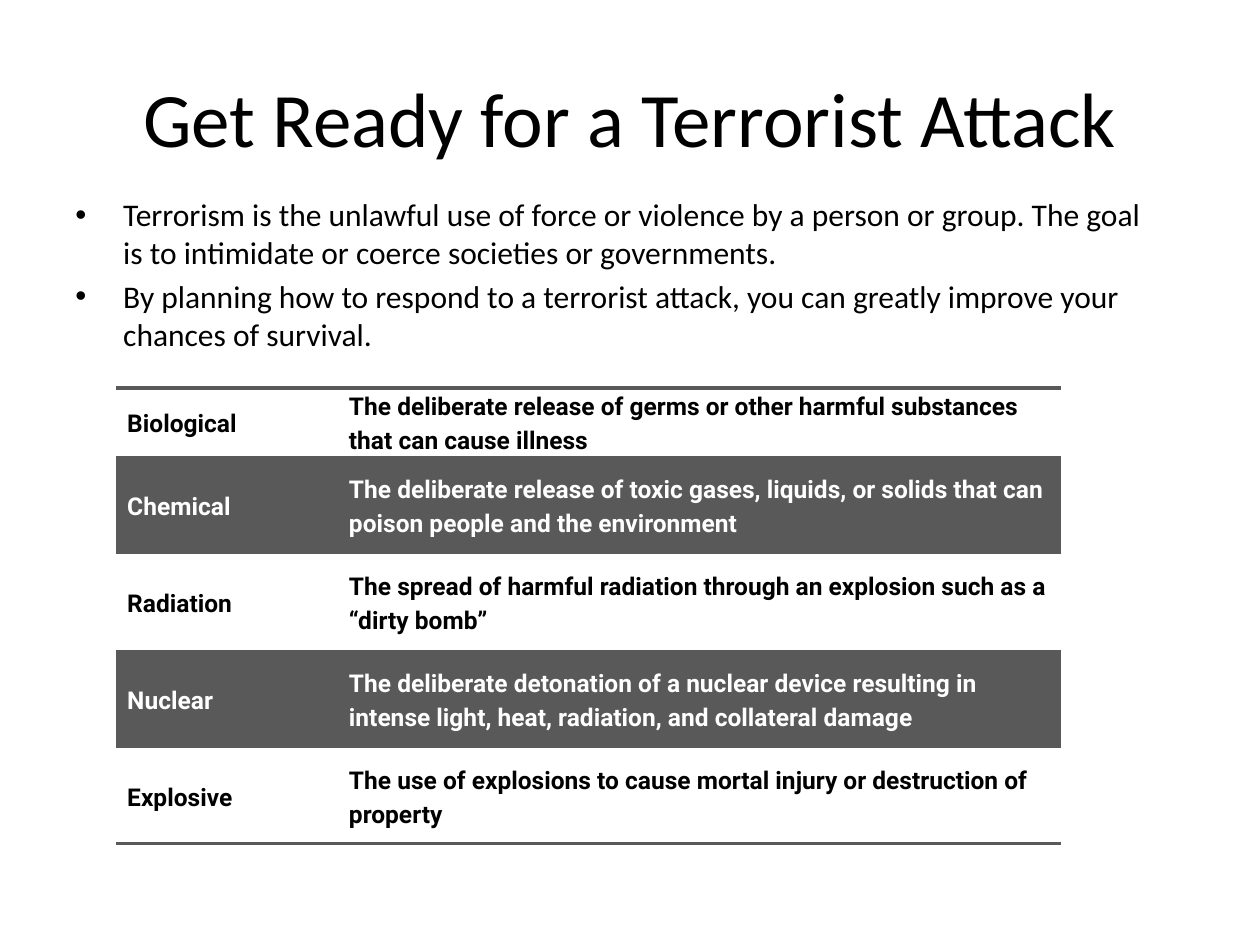
"""Build a slide on terrorist attacks: a title, two bullets and a table of threats."""
from dataclasses import dataclass

from lxml import etree
from pptx import Presentation
from pptx import util as u
from pptx.dml.color import RGBColor
from pptx.enum import text
from pptx.oxml.ns import qn

COLORS = {"ink": "000000", "paper": "FFFFFF", "band": "595959"}
NO_GRID_STYLE = "{2D5ABB26-0587-4C30-8999-92F81FD0307C}"
COLUMN_WIDTHS = (1.76, 5.74)


@dataclass(frozen=True)
class Threat:
    name: str
    meaning: str
    height: float
    banded: bool = False


BULLETS = (
    "Terrorism is the unlawful use of force or violence by a person or group. "
    "The goal is to intimidate or coerce societies or governments.",
    "By planning how to respond to a terrorist attack, you can greatly improve "
    "your chances of survival.",
)
THREATS = (
    Threat("Biological", "The deliberate release of germs or other harmful "
           "substances that can cause illness", 0.52),
    Threat("Chemical", "The deliberate release of toxic gases, liquids, or solids "
           "that can poison people and the environment", 0.78, True),
    Threat("Radiation", "The spread of harmful radiation through an explosion "
           "such as a “dirty bomb”", 0.76),
    Threat("Nuclear", "The deliberate detonation of a nuclear device resulting in "
           "intense light, heat, radiation, and collateral damage", 0.78, True),
    Threat("Explosive", "The use of explosions to cause mortal injury or "
           "destruction of property", 0.76),
)


def write(para, words: str, *, size: float, font: str = "Calibri", color: str = "ink",
          bold: bool = False, align=text.PP_ALIGN.LEFT, spacing: float = 1.0,
          before: float = 0) -> None:
    para.alignment = align
    para.line_spacing = spacing
    para.space_before = u.Pt(before)
    span = para.add_run()
    span.text = words
    span.font.name = font
    span.font.size = u.Pt(size)
    span.font.bold = bold
    span.font.color.rgb = RGBColor.from_string(COLORS[color])


def add_box(page, left: float, top: float, width: float, height: float, anchor):
    box = page.shapes.add_textbox(*map(u.Inches, (left, top, width, height)))
    box.text_frame.word_wrap = True
    box.text_frame.vertical_anchor = anchor
    return box.text_frame


def add_bullet(para, indent: float) -> None:
    properties = para._p.get_or_add_pPr()
    properties.set("marL", str(u.Inches(indent)))
    properties.set("indent", str(-u.Inches(indent)))
    etree.SubElement(properties, qn("a:buFont"), typeface="Arial")
    etree.SubElement(properties, qn("a:buChar"), char="•")


def add_border(cell, side: str, color: str, points: float) -> None:
    line = etree.Element(qn(f"a:{side}"), w=str(u.Pt(points)))
    fill = etree.SubElement(line, qn("a:solidFill"))
    etree.SubElement(fill, qn("a:srgbClr"), val=COLORS[color])
    cell._tc.get_or_add_tcPr().insert(0, line)


def fill_cell(cell, words: str, banded: bool) -> None:
    cell.vertical_anchor = text.MSO_ANCHOR.MIDDLE
    cell.margin_left = cell.margin_right = u.Inches(0.09)
    cell.margin_top = cell.margin_bottom = 0
    if banded:
        cell.fill.solid()
        cell.fill.fore_color.rgb = RGBColor.from_string(COLORS["band"])
    else:
        cell.fill.background()
    write(cell.text_frame.paragraphs[0], words, size=14, font="Roboto", bold=True,
          color="paper" if banded else "ink", spacing=1.15)


def add_threat_table(page, left: float, top: float) -> None:
    width, height = sum(COLUMN_WIDTHS), sum(threat.height for threat in THREATS)
    frame = page.shapes.add_table(len(THREATS), len(COLUMN_WIDTHS),
                                  *map(u.Inches, (left, top, width, height)))
    table = frame.table
    table.first_row = table.horz_banding = False
    table._tbl.tblPr.find(qn("a:tableStyleId")).text = NO_GRID_STYLE
    for column, column_width in zip(table.columns, COLUMN_WIDTHS):
        column.width = u.Inches(column_width)
    for row, threat in zip(table.rows, THREATS):
        row.height = u.Inches(threat.height)
        for cell, words in zip(row.cells, (threat.name, threat.meaning)):
            fill_cell(cell, words, threat.banded)
    for index, side in ((0, "lnT"), (len(THREATS) - 1, "lnB")):
        for cell in table.rows[index].cells:
            add_border(cell, side, "band", 2.25)


def main() -> None:
    deck = Presentation()
    deck.slide_width, deck.slide_height = u.Inches(10), u.Inches(7.5)
    page = deck.slides.add_slide(deck.slide_layouts[6])

    title = add_box(page, 0.5, 0.3, 9, 1.25, text.MSO_ANCHOR.MIDDLE)
    write(title.paragraphs[0], "Get Ready for a Terrorist Attack", size=44,
          align=text.PP_ALIGN.CENTER)

    body = add_box(page, 0.5, 1.5, 8.67, 4.95, text.MSO_ANCHOR.TOP)
    for index, words in enumerate(BULLETS):
        para = body.add_paragraph() if index else body.paragraphs[0]
        add_bullet(para, 0.38)
        write(para, words, size=18, before=3.6 if index else 0)

    add_threat_table(page, 0.92, 3.08)
    deck.save("out.pptx")


if __name__ == "__main__":
    main()
